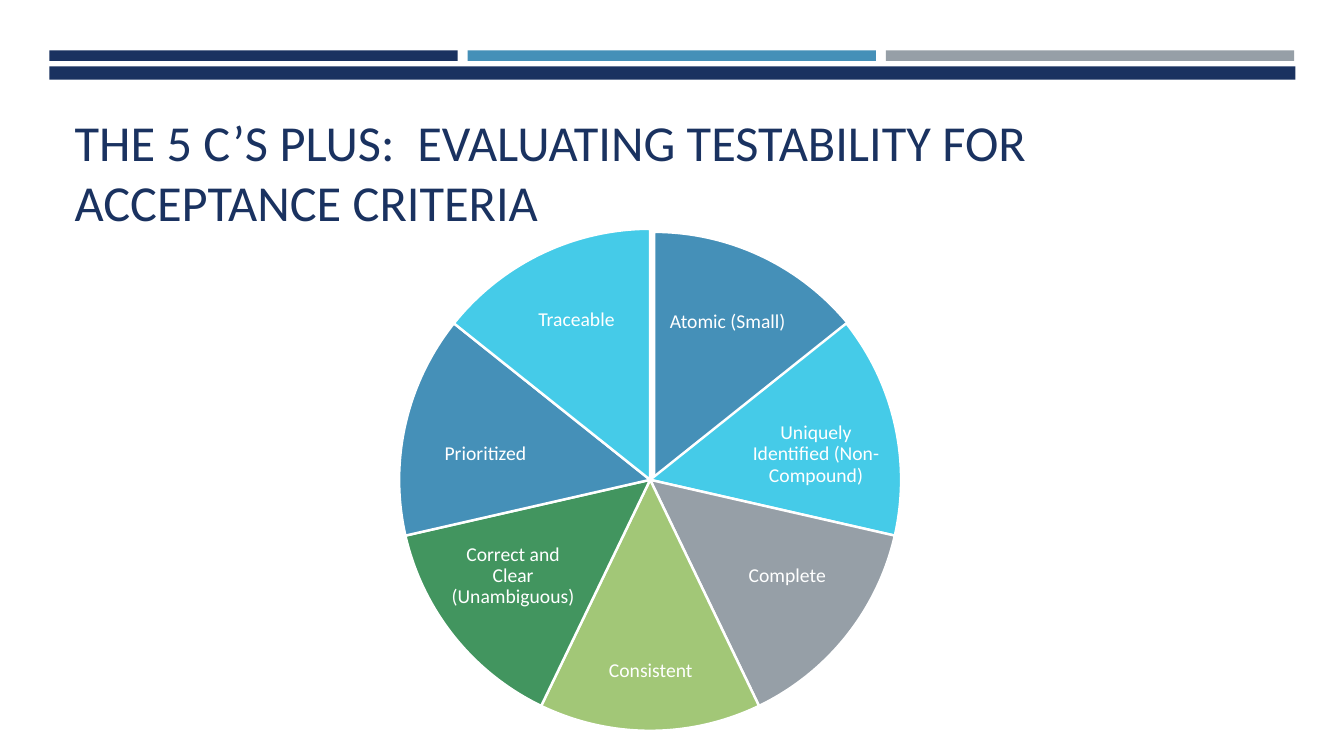
from dataclasses import dataclass

from pptx import Presentation
from pptx.dml.color import RGBColor
from pptx.enum.shapes import MSO_SHAPE
from pptx.enum.text import MSO_ANCHOR, PP_ALIGN
from pptx.util import Inches, Pt

RECTANGLE = MSO_SHAPE.RECTANGLE
PIE = MSO_SHAPE.PIE
LEFT = PP_ALIGN.LEFT
CENTER = PP_ALIGN.CENTER
MIDDLE = MSO_ANCHOR.MIDDLE
BOTTOM = MSO_ANCHOR.BOTTOM

SLIDE_WIDTH = Inches(13.33)
SLIDE_HEIGHT = Inches(7.5)
TITLE_ONLY = 5
FONT = "Calibri"
COLORS = {
    "navy": "1A3260",
    "blue": "4590B8",
    "cyan": "45CBE8",
    "gray": "969FA7",
    "lime": "A2C777",
    "green": "42955F",
    "white": "FFFFFF",
}


@dataclass(frozen=True)
class Box:
    """Left, top, width and height in percent of the slide's size."""

    left: float
    top: float
    width: float
    height: float

    def shifted(self, across: float, down: float) -> "Box":
        return Box(self.left + across, self.top + down, self.width, self.height)

    def lengths(self) -> tuple[int, int, int, int]:
        return (
            round(SLIDE_WIDTH * self.left / 100),
            round(SLIDE_HEIGHT * self.top / 100),
            round(SLIDE_WIDTH * self.width / 100),
            round(SLIDE_HEIGHT * self.height / 100),
        )


@dataclass(frozen=True)
class Slice:
    label: str
    color: str
    label_box: Box
    across: float = 0
    down: float = 0


TITLE = "THE 5 C’S PLUS:  EVALUATING TESTABILITY FOR ACCEPTANCE CRITERIA"
TITLE_BOX = Box(4.8, 10.53, 90.15, 20.8)
SHORT_BAR = Box(3.68, 6.67, 30.38, 1.4)
BAR_PITCH = 31.12
BAR_COLORS = ("navy", "blue", "gray")
LONG_BAR = Box(3.68, 8.8, 92.7, 1.73)
PIE_BOX = Box(29.7, 30.27, 37.35, 66.4)
SLICES = (
    Slice("Atomic (Small)", "blue", Box(49.05, 36.93, 10.2, 11.47), 0.3, 0.4),
    Slice("Uniquely Identified (Non-Compound)", "cyan", Box(55.28, 54, 10.88, 12.27)),
    Slice("Complete", "gray", Box(53.7, 69.87, 9.75, 12.67)),
    Slice("Consistent", "lime", Box(43.43, 82.4, 9.98, 12.67)),
    Slice("Correct and Clear (Unambiguous)", "green", Box(33.3, 69.87, 9.75, 12.67)),
    Slice("Prioritized", "blue", Box(30.68, 54, 10.88, 12.27)),
    Slice("Traceable", "cyan", Box(37.8, 36.67, 10.2, 11.47)),
)
FIRST_ANGLE = 270
SWEEP = 360 / len(SLICES)
ADJUSTMENT_PER_DEGREE = 0.6


def rgb(name: str) -> RGBColor:
    return RGBColor.from_string(COLORS[name])


def write_text(shape, text: str, size: float, color: str, alignment, anchor):
    frame = shape.text_frame
    frame.word_wrap = True
    frame.vertical_anchor = anchor
    frame.text = text
    paragraph = frame.paragraphs[0]
    paragraph.alignment = alignment
    paragraph.font.name = FONT
    paragraph.font.size = Pt(size)
    paragraph.font.color.rgb = rgb(color)
    return paragraph


def add_filled(slide, kind, box: Box, color: str):
    shape = slide.shapes.add_shape(kind, *box.lengths())
    shape.shadow.inherit = False
    shape.fill.solid()
    shape.fill.fore_color.rgb = rgb(color)
    shape.line.fill.background()
    return shape


def add_title(slide) -> None:
    title = slide.shapes.title
    title.left, title.top, title.width, title.height = TITLE_BOX.lengths()
    write_text(title, TITLE, 36, "navy", LEFT, BOTTOM)


def add_bars(slide) -> None:
    add_filled(slide, RECTANGLE, LONG_BAR, "navy")
    for index, color in enumerate(BAR_COLORS):
        add_filled(slide, RECTANGLE, SHORT_BAR.shifted(index * BAR_PITCH, 0), color)


def add_slice(slide, index: int, piece: Slice) -> None:
    box = PIE_BOX.shifted(piece.across, piece.down)
    wedge = add_filled(slide, PIE, box, piece.color)
    for side in range(2):
        angle = (FIRST_ANGLE + (index + side) * SWEEP) % 360
        wedge.adjustments[side] = angle * ADJUSTMENT_PER_DEGREE
    wedge.line.color.rgb = rgb("white")
    wedge.line.width = Pt(1.75)

    label = slide.shapes.add_textbox(*piece.label_box.lengths())
    frame = label.text_frame
    frame.margin_left = frame.margin_right = Inches(0.02)
    frame.margin_top = frame.margin_bottom = Inches(0.02)
    paragraph = write_text(label, piece.label, 14, "white", CENTER, MIDDLE)
    paragraph.line_spacing = 0.9
    paragraph.space_after = Pt(5)


def main() -> None:
    presentation = Presentation()
    presentation.slide_width = SLIDE_WIDTH
    presentation.slide_height = SLIDE_HEIGHT
    slide = presentation.slides.add_slide(presentation.slide_layouts[TITLE_ONLY])
    add_bars(slide)
    add_title(slide)
    for index, piece in enumerate(SLICES):
        add_slice(slide, index, piece)
    presentation.save("out.pptx")


if __name__ == "__main__":
    main()
